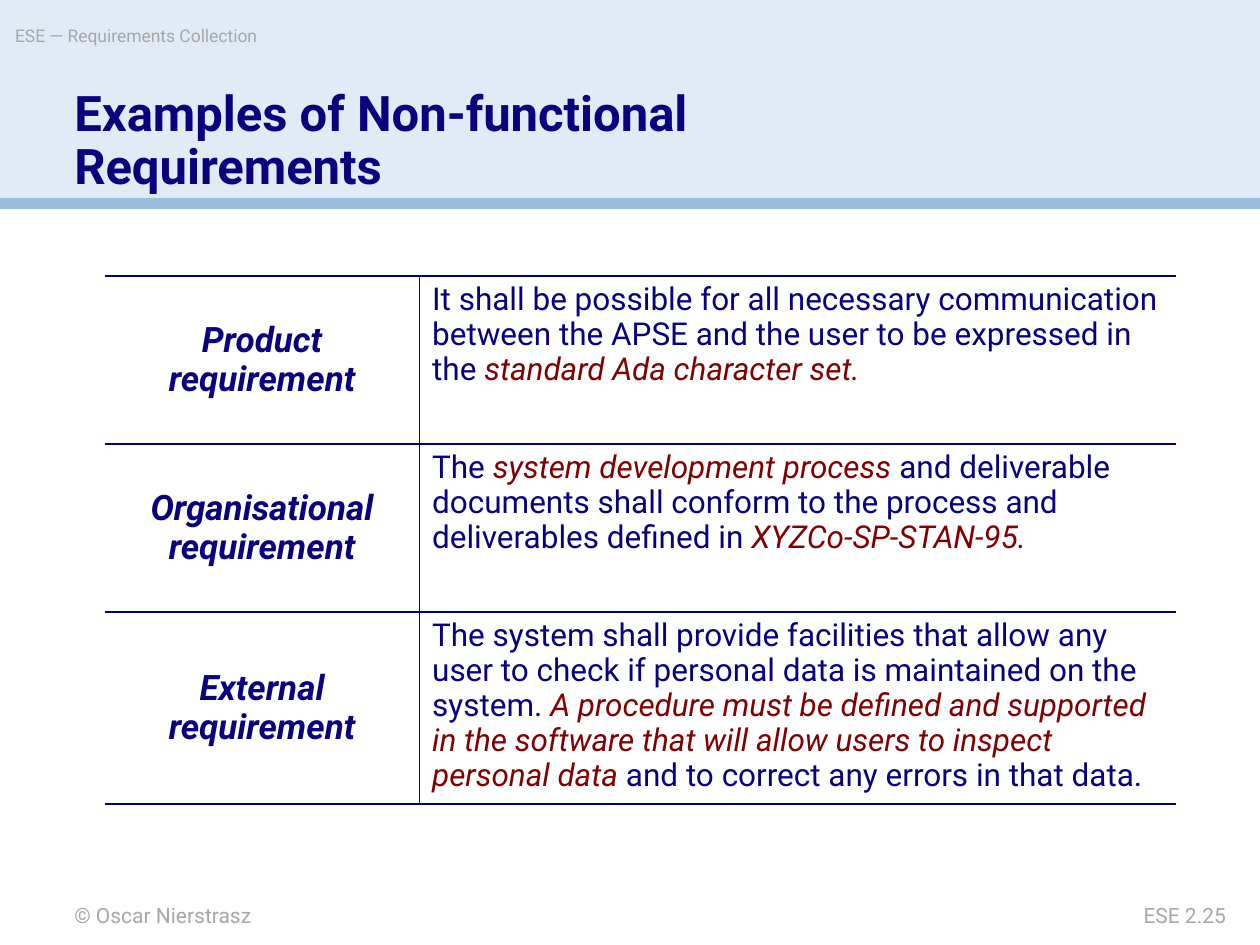
from dataclasses import dataclass

from lxml import etree
from pptx import Presentation
from pptx.dml.color import RGBColor
from pptx.enum import shapes, text
from pptx.oxml import ns
from pptx.util import Inches, Pt


@dataclass(frozen=True)
class Theme:
    font: str = "Roboto"
    ink: str = "0A017F"
    mark: str = "7F0101"
    rule: str = "00027F"
    pale: str = "E1EBF5"
    band: str = "9CBDDE"
    grey: str = "A7A7A7"
    title: int = 28
    label: int = 20
    body: int = 18
    foot: int = 12
    head: int = 10


T = Theme()

# Each row: label, then body pieces as (words, is marked)
ROWS = [
    ("Product requirement", [
        ("It shall be possible for all necessary communication between "
         "the APSE and the user to be expressed in the ", False),
        ("standard Ada character set.", True)]),
    ("Organisational requirement", [
        ("The ", False),
        ("system development process", True),
        (" and deliverable documents shall conform to the process and "
         "deliverables defined in ", False),
        ("XYZCo-SP-STAN-95.", True)]),
    ("External requirement", [
        ("The system shall provide facilities that allow any user to check "
         "if personal data is maintained on the system. ", False),
        ("A procedure must be defined and supported in the software that "
         "will allow users to inspect personal data", True),
        (" and to correct any errors in that data.", False)]),
]


def style(run, size, color, bold=False, italic=False):
    font = run.font
    font.name, font.size = T.font, Pt(size)
    font.bold, font.italic = bold, italic
    font.color.rgb = RGBColor.from_string(color)


def add_bar(slide, x, y, w, h, color):
    bar = slide.shapes.add_shape(
        shapes.MSO_SHAPE.RECTANGLE, Inches(x), Inches(y), Inches(w), Inches(h))
    bar.shadow.inherit = False
    bar.fill.solid()
    bar.fill.fore_color.rgb = RGBColor.from_string(color)
    bar.line.fill.background()


def add_text(slide, x, y, w, h, words, size, color, bold=False,
             align=text.PP_ALIGN.LEFT, space=1.0):
    box = slide.shapes.add_textbox(Inches(x), Inches(y), Inches(w), Inches(h))
    frame = box.text_frame
    frame.word_wrap = True
    frame.margin_left = frame.margin_right = 0
    frame.margin_top = frame.margin_bottom = 0
    para = frame.paragraphs[0]
    para.text = words
    para.alignment, para.line_spacing = align, space
    style(para.runs[0], size, color, bold)


def set_edges(cell, sides):
    """Draw the named cell sides and clear the others."""
    props = cell._tc.get_or_add_tcPr()
    for at, side in enumerate("LRTB"):
        line = etree.Element(ns.qn(f"a:ln{side}"), w=str(Pt(1)))
        if side in sides:
            fill = etree.SubElement(line, ns.qn("a:solidFill"))
            etree.SubElement(fill, ns.qn("a:srgbClr"), val=T.rule)
        else:
            etree.SubElement(line, ns.qn("a:noFill"))
        props.insert(at, line)


def fill_cell(cell, parts, sides):
    """Write (words, size, color, bold, italic) parts into one cell."""
    cell.fill.background()
    para = cell.text_frame.paragraphs[0]
    para.line_spacing = 0.95
    for words, *look in parts:
        run = para.add_run()
        run.text = words
        style(run, *look)
    set_edges(cell, sides)
    return para


def add_header(slide, x, y, w):
    add_bar(slide, x, y, w, 1.58, T.pale)
    add_bar(slide, x, y + 1.57, w, 0.09, T.band)
    add_text(slide, x + 0.12, y + 0.2, 5.9, 0.28,
             "ESE — Requirements Collection", T.head, T.grey)
    add_text(slide, x + 0.59, y + 0.71, 7.24, 0.89,
             "Examples of Non-functional Requirements",
             T.title, T.ink, bold=True, space=0.9)


def add_grid(slide, x, y, w, h):
    frame = slide.shapes.add_table(
        len(ROWS), 2, Inches(x), Inches(y), Inches(w), Inches(h))
    table = frame.table
    table.first_row = table.horz_banding = False
    table.columns[0].width = Inches(2.5)
    table.columns[1].width = Inches(w - 2.5)
    for at, (label, body) in enumerate(ROWS):
        name, note = table.rows[at].cells
        para = fill_cell(name, [(label, T.label, T.ink, True, True)], "RTB")
        para.alignment = text.PP_ALIGN.CENTER
        name.vertical_anchor = text.MSO_ANCHOR.MIDDLE
        fill_cell(note, [
            (words, T.body, T.mark if mark else T.ink, False, mark)
            for words, mark in body], "LTB")


def add_footer(slide, x, y, w):
    add_text(slide, x, y, 4.17, 0.2, "© Oscar Nierstrasz", T.foot, T.grey)
    add_text(slide, x + w - 1.48, y, 1.48, 0.2, "ESE 2.25", T.foot, T.grey,
             align=text.PP_ALIGN.RIGHT)


def main():
    deck = Presentation()
    deck.slide_width, deck.slide_height = Inches(10), Inches(7.5)
    slide = deck.slides.add_slide(deck.slide_layouts[6])
    add_header(slide, 0, 0, 10)
    add_grid(slide, 0.83, 2.19, 8.5, 4)
    add_footer(slide, 0.59, 7.16, 9.14)
    deck.save("out.pptx")


if __name__ == "__main__":
    main()
